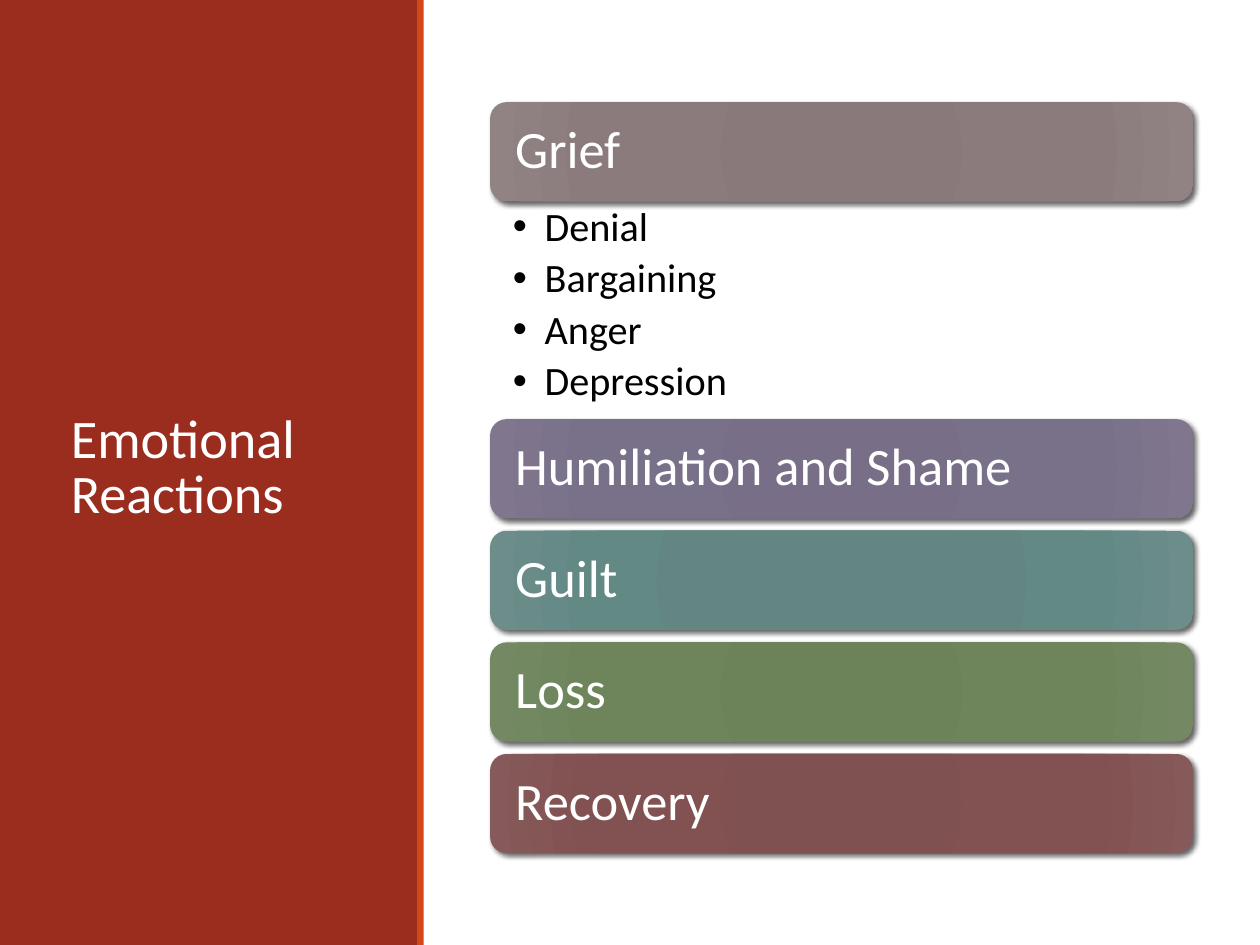
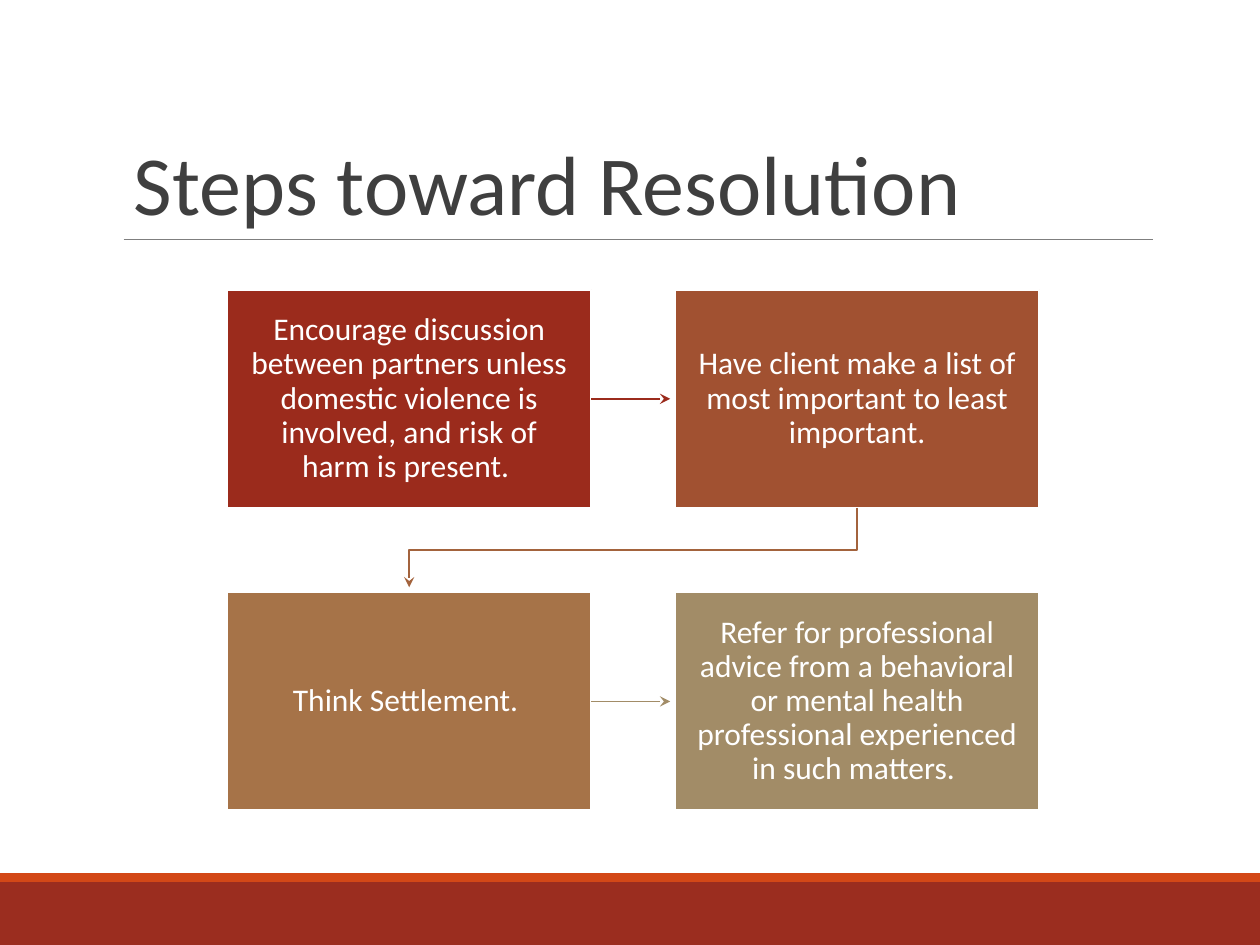
from dataclasses import dataclass
from lxml.etree import SubElement as Sub
from pptx import Presentation
from pptx.dml.color import RGBColor as Rgb
from pptx.enum.shapes import MSO_CONNECTOR as Link, MSO_SHAPE as Kind
from pptx.enum.text import MSO_ANCHOR as Anchor, PP_ALIGN as Align
from pptx.oxml.ns import qn
from pptx.util import Cm, Pt


@dataclass(frozen=True)
class Theme:
    font: str = "Calibri"
    brick: str = "9B2D1F"
    flame: str = "D34817"
    white: str = "FFFFFF"
    black: str = "000000"
    ink: str = "3F3F3F"
    rule: str = "7F7F7F"
    side: float = 31
    head: float = 48
    bar: float = 30
    item: float = 23
    step: float = 18


T = Theme()
WIDE, HIGH = 25.4, 19.05
STOPS = (0, 34, 70, 100)

# Label, gradient from centre to edge, points below the bar
BARS = [
    ("Grief", "877879 89797A 8B7B7C 918384",
     ["Denial", "Bargaining", "Anger", "Depression"]),
    ("Humiliation and Shame", "766D85 786E87 79708A 80778F", []),
    ("Guilt", "618682 638682 638985 6C8D8A", []),
    ("Loss", "6B8258 6C8359 6E855B 748963", []),
    ("Recovery", "7F4F4F 7F5151 825151 865A5A", []),
]

# Text, box colour, colour of the arrow that follows
STEPS = [
    ("Encourage discussion between partners unless domestic violence is "
     "involved, and risk of harm is present. ", "9B2B1C", "9B2B1C"),
    ("Have client make a list of most important to least important.",
     "A15131", "A3633D"),
    ("Think Settlement. ", "A67348", "A28C67"),
    ("Refer for professional advice from a behavioral or mental health "
     "professional experienced in such matters. ", "A28C67", None),
]


def paint(fill, tint):
    fill.solid()
    fill.fore_color.rgb = Rgb.from_string(tint)


def block(slide, box, tint, kind=Kind.RECTANGLE):
    """Add a plain shape without line or shadow."""
    shape = slide.shapes.add_shape(kind, *map(Cm, box))
    shape.shadow.inherit = False
    paint(shape.fill, tint)
    shape.line.fill.background()
    return shape


def write(shape, lines, size, tint, inset, space=0.9, anchor=Anchor.MIDDLE,
          align=Align.LEFT, before=0):
    """Fill a shape with one paragraph per line; inset is l, t, r, b."""
    frame = shape.text_frame
    frame.word_wrap = True
    frame.vertical_anchor = anchor
    (frame.margin_left, frame.margin_top,
     frame.margin_right, frame.margin_bottom) = map(Cm, inset)
    for n, line in enumerate(lines):
        para = frame.add_paragraph() if n else frame.paragraphs[0]
        para.alignment = align
        para.line_spacing = space
        para.space_before = Pt(before if n else 0)
        run = para.add_run()
        run.text = line
        run.font.name = T.font
        run.font.size = Pt(size)
        run.font.color.rgb = Rgb.from_string(tint)
    return frame


def title(slide, box, text, size, tint, anchor):
    shape = slide.shapes.add_textbox(*map(Cm, box))
    write(shape, [text], size, tint, (0.41, 0.13, 0.25, 0.13), 0.85, anchor)


def glow(shape, tints):
    """Give a shape a round gradient and a soft shadow."""
    shape.fill.gradient()
    props = shape.element.spPr
    grad = props.find(qn("a:gradFill"))
    for old in list(grad):
        grad.remove(old)
    stops = Sub(grad, qn("a:gsLst"))
    for pos, tint in zip(STOPS, tints.split()):
        stop = Sub(stops, qn("a:gs"), pos=str(pos * 1000))
        Sub(stop, qn("a:srgbClr"), val=tint)
    way = Sub(grad, qn("a:path"), {"path": "circle"})
    Sub(way, qn("a:fillToRect"), dict.fromkeys("ltrb", "50000"))
    shade = Sub(props.find(qn("a:effectLst")), qn("a:outerShdw"),
                blurRad=str(Pt(3)), dist=str(Pt(2)), dir="2700000",
                algn="ctr", rotWithShape="0")
    Sub(Sub(shade, qn("a:srgbClr"), val=T.black), qn("a:alpha"), val="60000")


def points(slide, box, items):
    shape = slide.shapes.add_textbox(*map(Cm, box))
    frame = write(shape, items, T.item, T.black, (0.46, 0.1, 0.58, 0.1),
                  anchor=Anchor.TOP, before=4.6)
    hang = Cm(0.64)
    for para in frame.paragraphs:
        props = para._p.get_or_add_pPr()
        props.set("marL", str(hang))
        props.set("indent", str(-hang))
        Sub(props, qn("a:buFont"), typeface="Arial")
        Sub(props, qn("a:buChar"), char="•")


def panel(slide, box, text):
    """Side panel with its title and bright edge."""
    x, y, w, h = box
    block(slide, box, T.brick)
    title(slide, (x + 1.02, y + 1.45, 6.43, 16.03), text, T.side, T.white,
          Anchor.MIDDLE)
    block(slide, (x + w - 0.02, y, 0.13, h), T.flame)


def stack(slide, box, bars):
    """Bars from top to bottom, each with its list or a gap below."""
    x, y, w, _ = box
    tall, gap, room = 2, 0.25, 4.39
    for label, tints, items in bars:
        bar = block(slide, (x, y, w, tall), T.white, Kind.ROUNDED_RECTANGLE)
        glow(bar, tints)
        write(bar, [label], T.bar, T.white, (0.41, 0.3, 0.41, 0.3))
        y += tall
        if items:
            points(slide, (x, y, w, room), items)
        y += room if items else gap


def band(slide, box):
    x, y, w, h = box
    edge = 0.18
    block(slide, (x, y + edge, w, h - edge), T.brick)
    block(slide, (x, y, w, edge), T.flame)


def line(slide, x, y, end, tint, width):
    """Draw a level line from x to end."""
    rule = slide.shapes.add_connector(Link.STRAIGHT, x, y, end, y)
    Sub(rule.element.spPr, qn("a:effectLst"))
    stroke(rule, tint, width)
    return rule


def stroke(shape, tint, width):
    paint(shape.line.fill, tint)
    shape.line.width = Pt(width)


def tip(shape):
    Sub(shape.element.spPr.find(qn("a:ln")), qn("a:tailEnd"), type="stealth")


def head(slide, box, text):
    """Title with a thin rule at its foot."""
    x, y, w, h = box
    title(slide, box, text, T.head, T.ink, Anchor.BOTTOM)
    line(slide, Cm(x + 0.2), Cm(y + h), Cm(x + w), T.rule, 0.75)


def join(slide, one, two, tint):
    """Lead an arrow from one box to the next, stopping just short."""
    short = Cm(0.1)
    if one.top == two.top:
        x, y = one.left + one.width, one.top + one.height // 2
        arrow = line(slide, x, y, two.left - short, tint, 1)
        arrow.begin_connect(one, 3)
    else:
        x, y = one.left + one.width // 2, one.top + one.height
        end = two.left + two.width // 2
        mid = (y + two.top) // 2
        form = slide.shapes.build_freeform(x, y)
        form.add_line_segments(
            [(x, mid), (end, mid), (end, two.top - short)], close=False)
        arrow = form.convert_to_shape()
        arrow.shadow.inherit = False
        arrow.fill.background()
        stroke(arrow, tint, 1)
    tip(arrow)


def flow(slide, box, steps, cols=2):
    """Boxes in reading order, linked by arrows."""
    x, y, w, h = box
    wide, tall = 7.34, 4.4
    across, down = w - wide, h - tall
    cells = []
    for n, (text, tint, _) in enumerate(steps):
        row, col = divmod(n, cols)
        cell = block(slide, (x + col * across, y + row * down, wide, tall),
                     tint)
        stroke(cell, T.white, 1.25)
        write(cell, [text], T.step, T.white, (0.36, 0.38, 0.36, 0.38),
              align=Align.CENTER)
        cells.append(cell)
    for one, two, step in zip(cells, cells[1:], steps):
        join(slide, one, two, step[2])


def main():
    deck = Presentation()
    deck.slide_width, deck.slide_height = Cm(WIDE), Cm(HIGH)
    blank = deck.slide_layouts[6]

    slide = deck.slides.add_slide(blank)
    panel(slide, (0, 0, 8.43, HIGH), "Emotional Reactions")
    stack(slide, (9.88, 2.06, 14.17, 15.14), BARS)

    slide = deck.slides.add_slide(blank)
    band(slide, (0, 17.6, WIDE, HIGH - 17.6))
    head(slide, (2.29, 0.79, 20.96, 4.04), "Steps toward Resolution")
    flow(slide, (4.58, 5.84, 16.37, 10.5), STEPS)

    deck.save("out.pptx")


if __name__ == "__main__":
    main()
